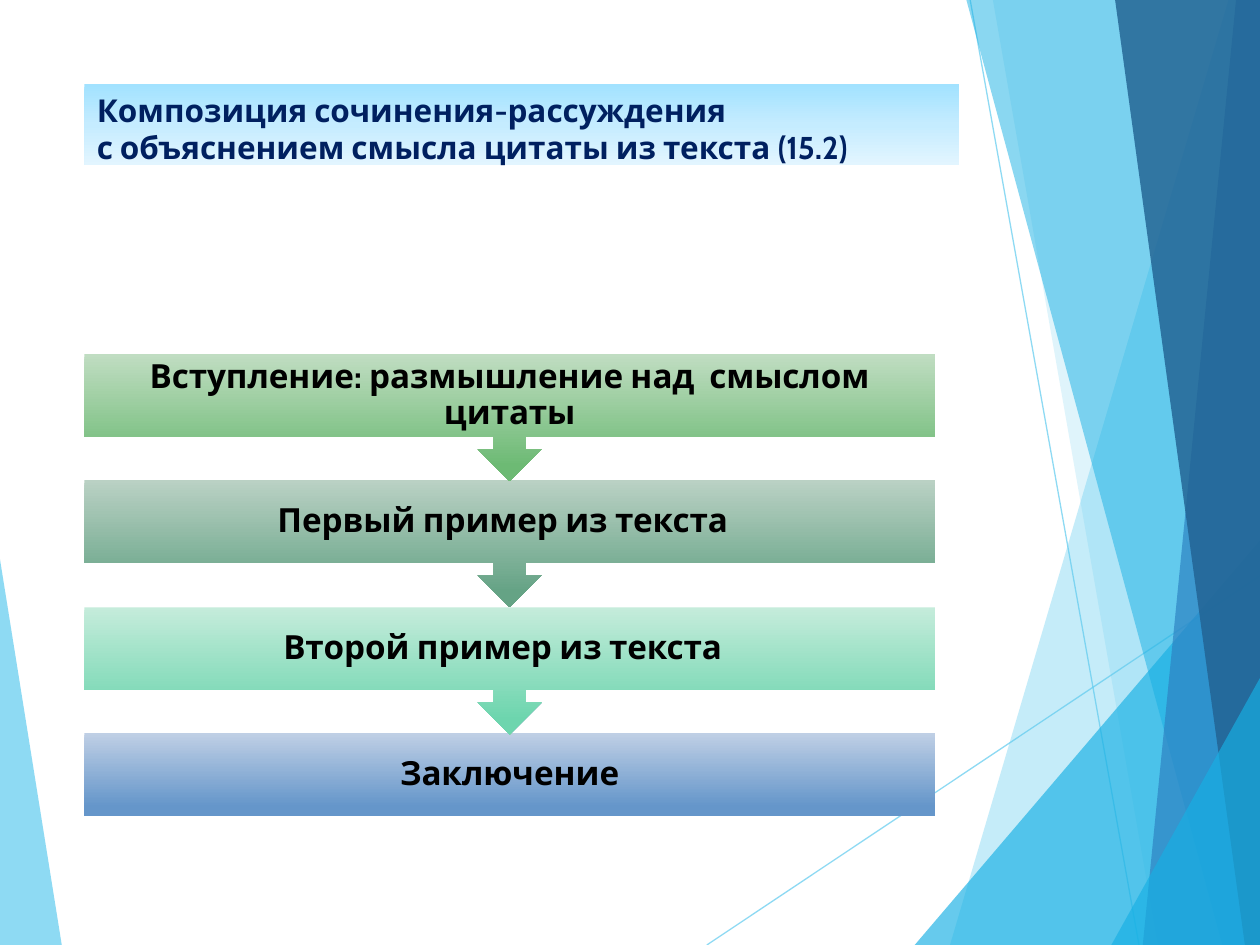
import pptx
import pptx.dml.color
import pptx.enum.shapes
import pptx.enum.text
import pptx.oxml
import pptx.oxml.ns
import pptx.util
from lxml import etree

RGB = pptx.dml.color.RGBColor
SHAPES = pptx.enum.shapes.MSO_SHAPE
ALIGN = pptx.enum.text.PP_ALIGN
ANCHOR = pptx.enum.text.MSO_ANCHOR
qn = pptx.oxml.ns.qn

# The grid has 1000 columns and 750 rows
COLUMNS, ROWS = 1000, 750
CELL = pptx.util.Inches(0.01)

SKY = RGB(0x5F, 0xCB, 0xEF)
CYAN = RGB(0x17, 0xB0, 0xE4)
BLUE = RGB(0x2E, 0x83, 0xC3)
DEEP_BLUE = RGB(0x22, 0x62, 0x92)
NAVY = RGB(0x00, 0x20, 0x60)
BLACK = RGB(0, 0, 0)
TITLE_SHADES = [(0, RGB(0xA2, 0xE2, 0xFF)), (50, RGB(0xC5, 0xEC, 0xFF)),
                (100, RGB(0xE2, 0xF5, 0xFF))]
GREEN_SHADES = [(0, RGB(0xC0, 0xDD, 0xC2)), (88, RGB(0x6D, 0xBA, 0x74))]
SAGE_SHADES = [(0, RGB(0xBA, 0xD1, 0xC4)), (88, RGB(0x65, 0xA3, 0x85))]
MINT_SHADES = [(0, RGB(0xC5, 0xEC, 0xDB)), (88, RGB(0x6D, 0xD5, 0xAE))]
STEEL_SHADES = [(0, RGB(0xBF, 0xCF, 0xE5)), (88, RGB(0x65, 0x96, 0xCA))]

TITLE_FONT = {"name": "Cabin", "size": pptx.util.Pt(18), "bold": True}
STEP_FONT = {"name": "Cabin", "size": pptx.util.Pt(19), "bold": True}
TITLE_FRAME = {"word_wrap": True, "vertical_anchor": ANCHOR.TOP}
STEP_FRAME = {"word_wrap": True, "vertical_anchor": ANCHOR.MIDDLE,
              **{f"margin_{side}": 15 * CELL
                 for side in ("left", "right", "top", "bottom")}}
TITLE_PARAGRAPH = {"alignment": ALIGN.LEFT}
STEP_PARAGRAPH = {"alignment": ALIGN.CENTER, "line_spacing": 0.9}


def apply(target, values):
    for name, value in values.items():
        setattr(target, name, value)


def set_alpha(fill, color, percent):
    fill.solid()
    fill.fore_color.rgb = color
    tint = fill._xPr.find(".//" + qn("a:srgbClr"))
    etree.SubElement(tint, qn("a:alpha"), val=str(percent * 1000))


class SlideBuilder:
    def __init__(self, slide):
        self.shapes = slide.shapes

    def facet(self, points, color, opacity):
        """Translucent polygon through (column, row) points."""
        builder = self.shapes.build_freeform(*points[0], scale=CELL)
        builder.add_line_segments(points[1:], close=True)
        facet = builder.convert_to_shape()
        facet.shadow.inherit = False
        facet.line.fill.background()
        set_alpha(facet.fill, color, opacity)

    def ray(self, start, end):
        """Thin translucent line."""
        ends = [CELL * place for place in (*start, *end)]
        ray = self.shapes.add_connector(
            pptx.enum.shapes.MSO_CONNECTOR.STRAIGHT, *ends)
        ray.line.width = pptx.util.Pt(0.75)
        set_alpha(ray.line.fill, SKY, 70)
        etree.SubElement(ray._element.spPr, qn("a:effectLst"))

    def panel(self, preset, box, shades, text, color, font, frame, paragraph):
        """Preset shape with a top-to-bottom gradient and text."""
        panel = self.shapes.add_shape(preset, *[CELL * side for side in box])
        panel.shadow.inherit = False
        panel.line.fill.background()
        panel.fill.gradient()
        panel.fill.gradient_angle = 270
        stops = panel._element.spPr.find(".//" + qn("a:gsLst"))
        for stop in list(stops):
            stops.remove(stop)
        for position, shade in shades:
            stop = etree.SubElement(stops, qn("a:gs"), pos=str(position * 1000))
            etree.SubElement(stop, qn("a:srgbClr"), val=str(shade))
        panel.text_frame.text = text
        apply(panel.text_frame, frame)
        for line in panel.text_frame.paragraphs:
            apply(line, paragraph)
            for run in line.runs:
                apply(run.font, font)
                run.font.color.rgb = color


def main():
    deck = pptx.Presentation()
    deck.slide_width, deck.slide_height = COLUMNS * CELL, ROWS * CELL
    builder = SlideBuilder(deck.slides.add_slide(deck.slide_layouts[6]))

    # Background facets and rays
    corner, top_corner = (COLUMNS, ROWS), (COLUMNS, 0)
    builder.facet([(0, 444), (49, ROWS), (0, ROWS)], SKY, 70)
    builder.ray((561, ROWS), (COLUMNS, 457))
    builder.ray((770, 0), (904, ROWS))
    for points, color, opacity in [
        ([(975, 0), (754, ROWS), corner, top_corner], SKY, 36),
        ([(788, 0), (919, ROWS), corner, top_corner], SKY, 20),
        ([(726, ROWS), (COLUMNS, 429), corner], CYAN, 66),
        ([(767, 0), (970, ROWS), corner, top_corner], CYAN, 50),
        ([(981, 0), (907, ROWS), corner, top_corner], BLUE, 70),
        ([(885, 0), (988, ROWS), corner, top_corner], DEEP_BLUE, 82),
        ([(882, ROWS), (COLUMNS, 538), corner], CYAN, 66),
    ]:
        builder.facet(points, color, opacity)

    # Title
    builder.panel(
        SHAPES.RECTANGLE, (67, 67, 694, 64), TITLE_SHADES,
        "Композиция сочинения-рассуждения\v"
        "с объяснением смысла цитаты из текста (15.2)",
        NAVY, TITLE_FONT, TITLE_FRAME, TITLE_PARAGRAPH)

    # Essay steps, drawn upwards so that each arrow lies over the next step
    steps = [
        ("Вступление: размышление над  смыслом цитаты", GREEN_SHADES, 15),
        ("Первый пример из текста", SAGE_SHADES, 26),
        ("Второй пример из текста", MINT_SHADES, 26),
        ("Заключение", STEEL_SHADES, 15),
    ]
    first_row, pitch = 281, 100.4
    for index, (text, shades, right) in reversed(list(enumerate(steps))):
        last = index == len(steps) - 1
        preset = SHAPES.RECTANGLE if last else SHAPES.DOWN_ARROW_CALLOUT
        box = (67, round(first_row + index * pitch), 675, 66 if last else 101)
        frame = {**STEP_FRAME, "margin_right": right * CELL}
        builder.panel(preset, box, shades, text, BLACK,
                      STEP_FONT, frame, STEP_PARAGRAPH)

    deck.save("out.pptx")


if __name__ == "__main__":
    main()
